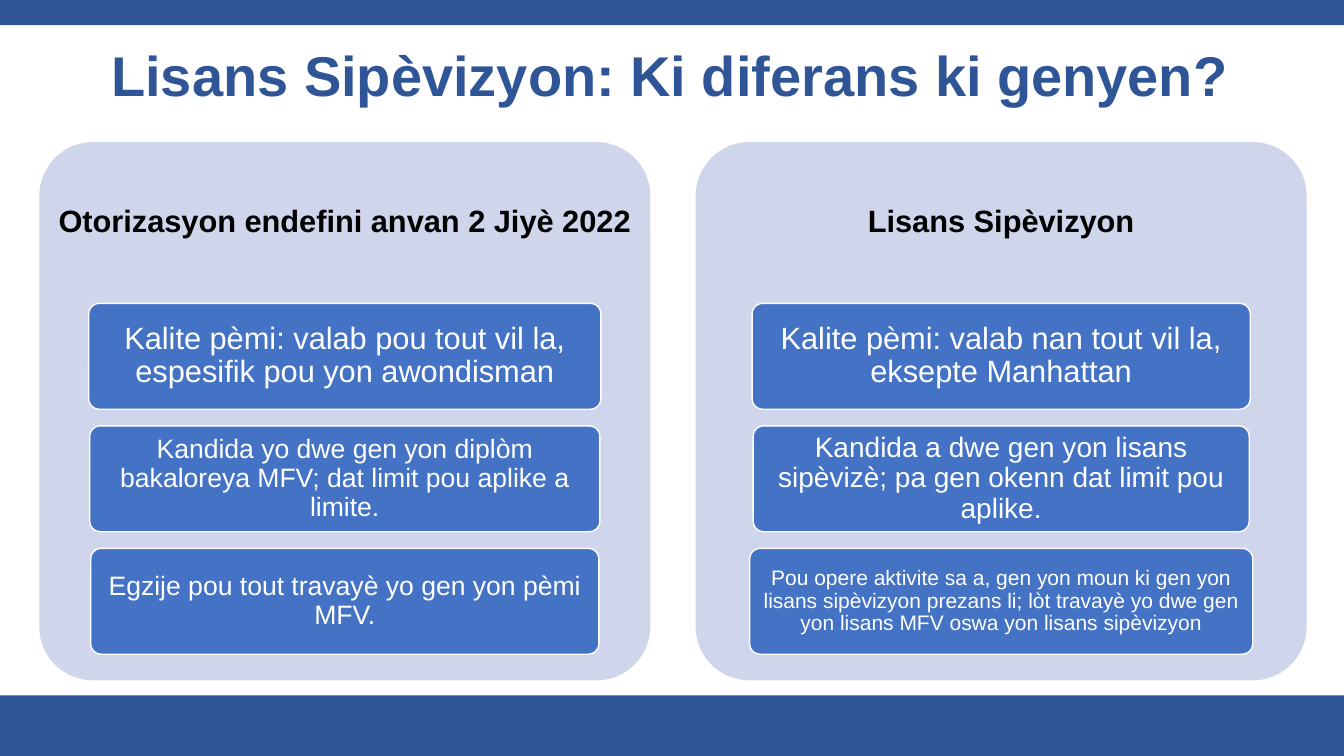
from pptx import Presentation
from pptx.dml.color import RGBColor
from pptx.enum import shapes, text
from pptx.util import Inches, Pt

NAVY = RGBColor(0x2F, 0x55, 0x97)
BLUE = RGBColor(0x44, 0x72, 0xC4)
PALE = RGBColor(0xCF, 0xD5, 0xEA)
WHITE = RGBColor(0xFF, 0xFF, 0xFF)
BLACK = RGBColor(0, 0, 0)

SLIDE_WIDTH, SLIDE_HEIGHT = 13.33, 7.5
PANEL_TOP, PANEL_WIDTH, PANEL_HEIGHT = 1.41, 6.06, 5.34
HEADING_HEIGHT = 1.6
CARD_TOP, CARD_HEIGHT, CARD_STEP = 3.01, 1.05, 1.215

# Each panel: left edge, heading, cards of (width, text size, side inset, text)
PANELS = [
    (0.39, "Otorizasyon endefini anvan 2 Jiyè 2022", [
        (5.08, 22, 0.06, "Kalite pèmi: valab pou tout vil la, espesifik pou yon awondisman"),
        (5.06, 19, 0.05, "Kandida yo dwe gen yon diplòm bakaloreya MFV; "
                         "dat limit pou aplike a limite."),
        (5.04, 19, 0.05, "Egzije pou tout travayè yo gen yon pèmi MFV."),
    ]),
    (6.9, "Lisans Sipèvizyon", [
        (4.94, 22, 0.06, "Kalite pèmi: valab nan tout vil la, eksepte Manhattan"),
        (4.92, 20, 0.06, "Kandida a dwe gen yon lisans sipèvizè; "
                         "pa gen okenn dat limit pou aplike."),
        (4.99, 15, 0.04, "Pou opere aktivite sa a, gen yon moun ki gen yon lisans sipèvizyon "
                         "prezans li; lòt travayè yo dwe gen yon lisans MFV oswa yon lisans "
                         "sipèvizyon"),
    ]),
]


def set_attributes(target, values):
    for name, value in values.items():
        setattr(target, name, value)


def write_text(shape, words, size, color, bold=False, side=0.1, edge=0.05):
    frame = shape.text_frame
    set_attributes(frame, {
        "word_wrap": True, "vertical_anchor": text.MSO_ANCHOR.MIDDLE,
        "margin_left": Inches(side), "margin_right": Inches(side),
        "margin_top": Inches(edge), "margin_bottom": Inches(edge),
    })
    para = frame.paragraphs[0]
    set_attributes(para, {"alignment": text.PP_ALIGN.CENTER, "line_spacing": 0.9})
    span = para.add_run()
    span.text = words
    set_attributes(span.font, {"name": "Arial", "size": Pt(size), "bold": bold})
    span.font.color.rgb = color


def add_label(page, left, top, width, height, words, size, color, side=0.1, edge=0.05):
    box = page.shapes.add_textbox(Inches(left), Inches(top), Inches(width), Inches(height))
    write_text(box, words, size, color, bold=True, side=side, edge=edge)


def add_block(page, kind, left, top, width, height, fill, line=None):
    block = page.shapes.add_shape(
        kind, Inches(left), Inches(top), Inches(width), Inches(height))
    block.shadow.inherit = False
    block.fill.solid()
    block.fill.fore_color.rgb = fill
    if line is None:
        block.line.fill.background()
    else:
        block.line.color.rgb = line
        block.line.width = Pt(1)
    if kind == shapes.MSO_SHAPE.ROUNDED_RECTANGLE:
        block.adjustments[0] = 0.1
    return block


def add_panel(page, left, heading, cards):
    rounded = shapes.MSO_SHAPE.ROUNDED_RECTANGLE
    add_block(page, rounded, left, PANEL_TOP, PANEL_WIDTH, PANEL_HEIGHT, PALE)
    add_label(page, left, PANEL_TOP, PANEL_WIDTH, HEADING_HEIGHT, heading, 22, BLACK,
              side=0.09, edge=0.09)
    # Cards are centred in the panel
    for row, (width, size, side, words) in enumerate(cards):
        card = add_block(page, rounded, left + (PANEL_WIDTH - width) / 2,
                         CARD_TOP + row * CARD_STEP, width, CARD_HEIGHT, BLUE, WHITE)
        write_text(card, words, size, WHITE, side=side, edge=side - 0.01)


def main():
    deck = Presentation()
    deck.slide_width, deck.slide_height = Inches(SLIDE_WIDTH), Inches(SLIDE_HEIGHT)
    page = deck.slides.add_slide(deck.slide_layouts[6])

    # Bands along the top and bottom
    for top, height in ((0, 0.25), (6.9, 0.6)):
        add_block(page, shapes.MSO_SHAPE.RECTANGLE, 0, top, SLIDE_WIDTH, height, NAVY)

    # Title
    add_label(page, -0.13, 0.4, 13.54, 0.75,
              "Lisans Sipèvizyon: Ki diferans ki genyen?", 40, NAVY)

    # The two licences compared
    for left, heading, cards in PANELS:
        add_panel(page, left, heading, cards)

    deck.save("out.pptx")


if __name__ == "__main__":
    main()
